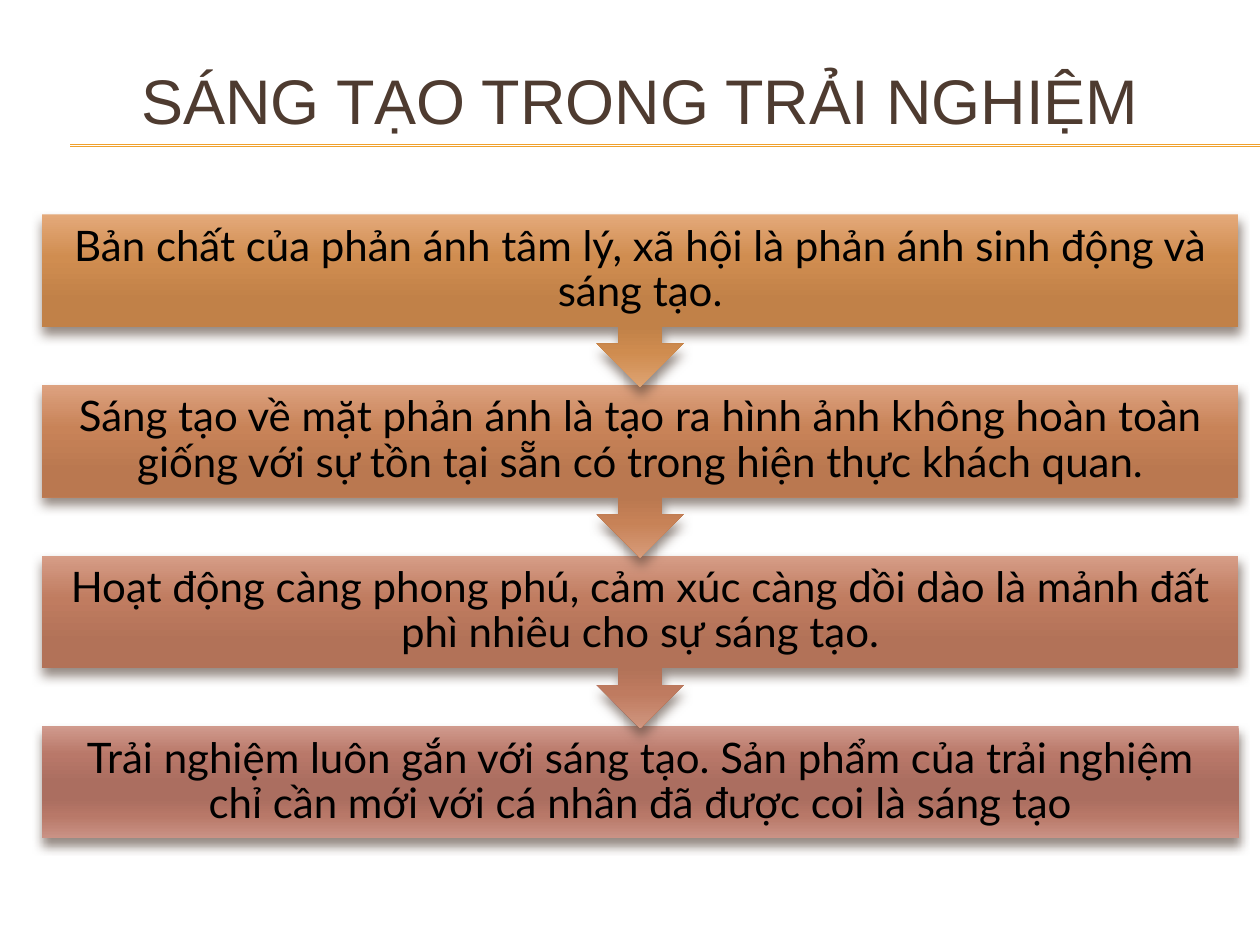
from dataclasses import dataclass

from lxml.etree import SubElement
from pptx import Presentation
from pptx.dml.color import RGBColor
from pptx.enum.shapes import MSO_CONNECTOR, MSO_SHAPE as Preset
from pptx.enum.text import MSO_ANCHOR, MSO_AUTO_SIZE, PP_ALIGN
from pptx.oxml.ns import qn
from pptx.util import Cm, Pt

COLORS = {"title": "4E3B30", "rule": "F0A22E", "text": "000000", "shadow": "4E3B30"}
STOP_POSITIONS = (0, 25, 50, 65, 80, 100)

LEFT, WIDTH = 0.84, 24.13
FIRST_TOP, PITCH = 4.32, 3.44
BOX_HEIGHT, CALLOUT_HEIGHT = 2.26, 3.48
INSET = 0.48


@dataclass
class Step:
    text: str
    gradient: tuple[str, ...]


STEPS = [
    Step("Bản chất của phản ánh tâm lý, xã hội là phản ánh sinh động và sáng tạo.",
         ("E4A97A", "D08D50", "C18148", "C18148", "CF8C4F", "DEA372")),
    Step("Sáng tạo về mặt phản ánh là tạo ra hình ảnh không hoàn toàn giống với "
         "sự tồn tại sẵn có trong hiện thực khách quan.",
         ("DDA280", "C88358", "BA7850", "BA7850", "C78257", "D79B79")),
    Step("Hoạt động càng phong phú, cảm xúc càng dồi dào là mảnh đất phì nhiêu "
         "cho sự sáng tạo.",
         ("D69D87", "C07C60", "B27258", "B27258", "BF7B60", "D0967F")),
    Step("Trải nghiệm luôn gắn với sáng tạo. Sản phẩm của trải nghiệm chỉ cần mới "
         "với cá nhân đã được coi là sáng tạo",
         ("D09A8D", "B97869", "AB6E60", "AB6E60", "B87868", "CA9386")),
]


def set_attributes(target, formats: dict) -> None:
    for name, value in formats.items():
        setattr(target, name, value)


def write_text(shape, text: str, font_name: str, size: int, color: str, inset: float,
               line_spacing: float) -> None:
    frame = shape.text_frame
    frame.text = text
    set_attributes(frame, {
        "word_wrap": True, "auto_size": MSO_AUTO_SIZE.NONE,
        "vertical_anchor": MSO_ANCHOR.MIDDLE,
        "margin_left": Cm(inset), "margin_right": Cm(inset),
        "margin_top": Cm(inset), "margin_bottom": Cm(inset),
    })
    paragraph = frame.paragraphs[0]
    set_attributes(paragraph, {"alignment": PP_ALIGN.CENTER, "line_spacing": line_spacing})
    set_attributes(paragraph.font, {"name": font_name, "size": Pt(size)})
    paragraph.font.color.rgb = RGBColor.from_string(color)


def fill_gradient(shape, colors: tuple[str, ...]) -> None:
    """Fill from top to bottom with one colour at each stop position."""
    shape.fill.gradient()
    shape.fill.gradient_angle = 270
    stops = shape._element.spPr.find(f".//{qn('a:gsLst')}")
    for stop in list(stops):
        stops.remove(stop)
    for position, color in zip(STOP_POSITIONS, colors):
        stop = SubElement(stops, qn("a:gs"), pos=str(position * 1000))
        SubElement(stop, qn("a:srgbClr"), val=color)


def add_shadow(shape) -> None:
    shape.shadow.inherit = False
    effects = shape._element.spPr.find(qn("a:effectLst"))
    shadow = SubElement(effects, qn("a:outerShdw"), blurRad=str(Pt(6)), dist=str(Pt(4)),
                        dir="5400000", algn="ctr", rotWithShape="0")
    color = SubElement(shadow, qn("a:srgbClr"), val=COLORS["shadow"])
    SubElement(color, qn("a:alpha"), val="60000")


def add_step(slide, index: int, step: Step) -> None:
    is_last = index == len(STEPS) - 1
    preset = Preset.RECTANGLE if is_last else Preset.DOWN_ARROW_CALLOUT
    height = BOX_HEIGHT if is_last else CALLOUT_HEIGHT
    shape = slide.shapes.add_shape(preset, Cm(LEFT), Cm(FIRST_TOP + index * PITCH),
                                   Cm(WIDTH), Cm(height))
    fill_gradient(shape, step.gradient)
    shape.line.fill.background()
    add_shadow(shape)
    write_text(shape, step.text, "Lato", 24, COLORS["text"], INSET, 0.9)


def add_rule(slide, top: float) -> None:
    rule = slide.shapes.add_connector(MSO_CONNECTOR.STRAIGHT, Cm(1.42), Cm(top),
                                      Cm(25.4), Cm(top))
    rule.line.color.rgb = RGBColor.from_string(COLORS["rule"])
    rule.line.width = Pt(0.75)
    SubElement(rule._element.spPr, qn("a:effectLst"))


def main() -> None:
    presentation = Presentation()
    set_attributes(presentation, {"slide_width": Cm(25.4), "slide_height": Cm(19.05)})
    slide = presentation.slides.add_slide(presentation.slide_layouts[5])

    for top in (2.92, 2.95):
        add_rule(slide, top)

    title = slide.shapes.title
    set_attributes(title, {"left": Cm(LEFT), "top": Cm(0.84),
                           "width": Cm(WIDTH), "height": Cm(2.34)})
    write_text(title, "SÁNG TẠO TRONG TRẢI NGHIỆM", "Arial", 36, COLORS["title"], 0.13, 1.0)

    # Each arrow tip overlaps the box below it, so the lowest box goes first.
    for index, step in reversed(list(enumerate(STEPS))):
        add_step(slide, index, step)

    presentation.save("out.pptx")


if __name__ == "__main__":
    main()
